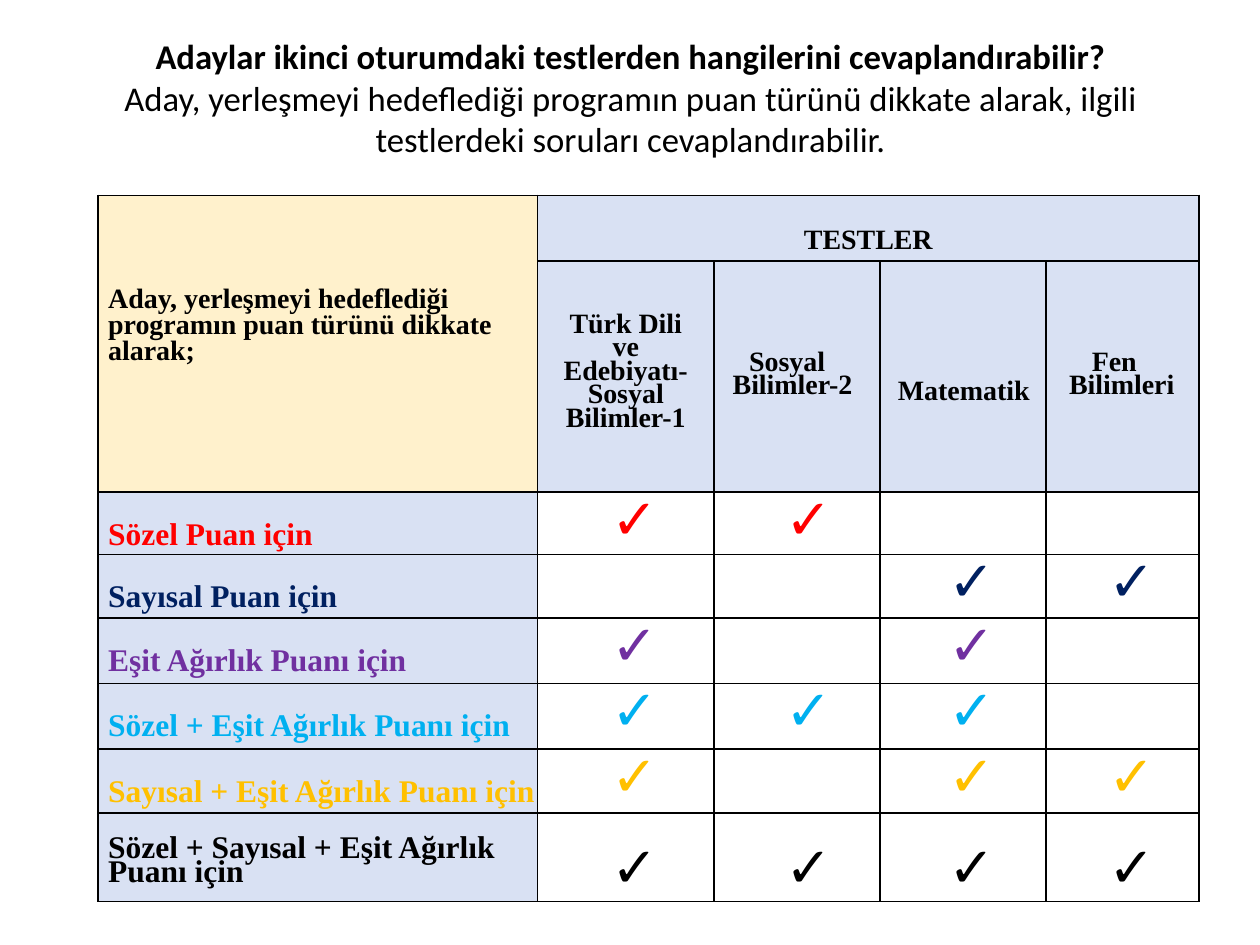
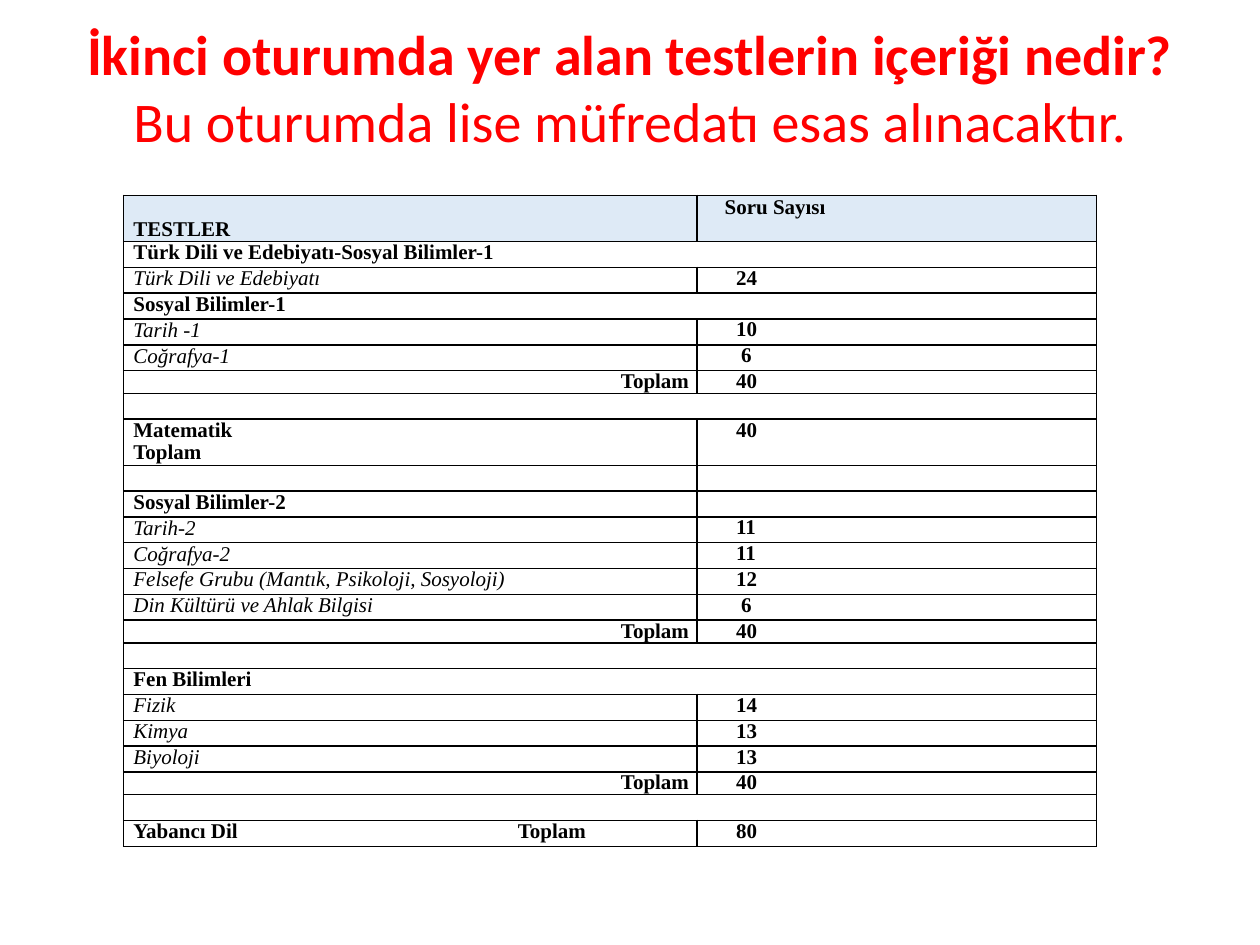
from lxml import etree
from pptx import Presentation
from pptx.dml.color import RGBColor
from pptx.enum.text import MSO_ANCHOR, PP_ALIGN
from pptx.oxml.ns import qn
from pptx.util import Cm, Pt

LEFT, MID, RIGHT = PP_ALIGN.LEFT, PP_ALIGN.CENTER, PP_ALIGN.RIGHT
MIDDLE = MSO_ANCHOR.MIDDLE
SERIF, SANS, ARIAL = "Times New Roman", "Calibri", "Arial"
BLACK, RED = "000000", "FF0000"
CREAM, BLUE, PALE = "FFF1CC", "D9E1F3", "DEEAF6"
TOP = 3.94
PAD = 0.2

SCORES = [
    ("Sözel Puan için", RED, "1100"),
    ("Sayısal Puan için", "002060", "0011"),
    ("Eşit Ağırlık Puanı için", "7030A0", "1010"),
    ("Sözel + Eşit Ağırlık Puanı için", "00B0F0", "1110"),
    ("Sayısal + Eşit Ağırlık Puanı için", "FFC000", "1011"),
    ("Sözel + Sayısal + Eşit Ağırlık Puanı için", BLACK, "1111"),
]

GROUP, TEST, TOTAL = "group", "test", "total"
TESTS = [
    (GROUP, "Türk Dili ve Edebiyatı-Sosyal Bilimler-1", None),
    (TEST, "Türk Dili ve Edebiyatı", "24"),
    (GROUP, "Sosyal Bilimler-1", None),
    (TEST, "Tarih -1", "10"),
    (TEST, "Coğrafya-1", "6"),
    (TOTAL, "Toplam", "40"),
    (GROUP, "", None),
    (GROUP, "Matematik\nToplam", "40"),
    (GROUP, "", ""),
    (GROUP, "Sosyal Bilimler-2", ""),
    (TEST, "Tarih-2", "11"),
    (TEST, "Coğrafya-2", "11"),
    (TEST, "Felsefe Grubu (Mantık, Psikoloji, Sosyoloji)", "12"),
    (TEST, "Din Kültürü ve Ahlak Bilgisi", "6"),
    (TOTAL, "Toplam", "40"),
    (GROUP, "", None),
    (GROUP, "Fen Bilimleri", None),
    (TEST, "Fizik", "14"),
    (TEST, "Kimya", "13"),
    (TEST, "Biyoloji", "13"),
    (TOTAL, "Toplam", "40"),
    (GROUP, "", None),
    (GROUP, "Yabancı Dil\tToplam", "80"),
]


def rgb(code):
    """Turn a hex string into a colour."""
    return RGBColor.from_string(code)


def style(font, name, size, color=BLACK, bold=True, italic=False):
    """Set every trait of a font."""
    font.name, font.size = name, Pt(size)
    font.bold, font.italic = bold, italic
    font.color.rgb = rgb(color)


def title(slide, top, size, color, lines):
    """Add a centred heading whose first line is bold."""
    box = slide.shapes.add_textbox(Cm(1.28), Cm(top), Cm(22.86), Cm(3.18))
    frame = box.text_frame
    frame.word_wrap = True
    frame.vertical_anchor = MIDDLE
    frame.text = "\n".join(lines)
    for num, para in enumerate(frame.paragraphs):
        para.alignment = MID
        style(para.font, SANS, size, color, bold=num == 0)


def border(cell):
    """Draw a thin black line on each side of a cell."""
    props = cell._tc.get_or_add_tcPr()
    for num, side in enumerate(("a:lnL", "a:lnR", "a:lnT", "a:lnB")):
        line = etree.Element(qn(side), w=str(Pt(1)))
        fill = etree.SubElement(line, qn("a:solidFill"))
        etree.SubElement(fill, qn("a:srgbClr"), val=BLACK)
        props.insert(num, line)


def grid(slide, left, cols, rows):
    """Add a plain ruled table with the given sizes."""
    frame = slide.shapes.add_table(len(rows), len(cols), Cm(left), Cm(TOP),
                                   Cm(sum(cols)), Cm(sum(rows)))
    table = frame.table
    table.first_row = table.horz_banding = False
    for col, width in zip(table.columns, cols):
        col.width = Cm(width)
    for row, height in zip(table.rows, rows):
        row.height = Cm(height)
    for cell in table.iter_cells():
        cell.margin_left = cell.margin_right = 0
        cell.margin_top = cell.margin_bottom = 0
        cell.fill.background()
        border(cell)
        style(cell.text_frame.paragraphs[0].font, SERIF, 12)
    return table


def shade(cell, color):
    """Fill a cell."""
    cell.fill.solid()
    cell.fill.fore_color.rgb = rgb(color)


def write(cell, text, size, top=0, left=PAD, right=0, lead=12.9, align=LEFT,
          name=SERIF, color=BLACK, bold=True, italic=False):
    """Put text in a cell at a set inset and line height."""
    cell.margin_top, cell.margin_left = Cm(top), Cm(left)
    cell.margin_right = Cm(right)
    cell.text_frame.text = text
    for para in cell.text_frame.paragraphs:
        para.alignment = align
        para.line_spacing = Pt(lead)
        style(para.font, name, size, color, bold, italic)


def indent(cell, width):
    """Indent the first line of a cell."""
    props = cell.text_frame.paragraphs[0]._p.get_or_add_pPr()
    props.set("indent", str(Cm(width)))


def tab(cell, place):
    """Set a left tab stop in a cell."""
    props = cell.text_frame.paragraphs[0]._p.get_or_add_pPr()
    stops = etree.Element(qn("a:tabLst"))
    etree.SubElement(stops, qn("a:tab"), pos=str(Cm(place)), algn="l")
    props.find(qn("a:defRPr")).addprevious(stops)


def heads(table):
    """Fill the two heading rows of the score table."""
    table.cell(0, 0).merge(table.cell(1, 0))
    table.cell(0, 1).merge(table.cell(0, 4))
    shade(table.cell(0, 0), CREAM)
    write(table.cell(0, 0), "Aday, yerleşmeyi hedeflediği programın puan "
          "türünü dikkate alarak;", 16, top=1.87, lead=15)
    shade(table.cell(0, 1), BLUE)
    write(table.cell(0, 1), "TESTLER", 16, top=0.76, left=0, align=MID)
    turk, social, maths, science = [table.cell(1, num) for num in range(1, 5)]
    for cell in (turk, social, maths, science):
        shade(cell, BLUE)
    write(turk, "Türk Dili ve Edebiyatı- Sosyal Bilimler-1", 16, top=1.1,
          left=0.33, right=0.33, lead=13.5, align=MID)
    write(social, "Sosyal Bilimler-2", 16, top=1.87, left=0.38, lead=13.5)
    indent(social, 0.33)
    write(maths, "Matematik", 16, top=2.49, left=0.36)
    write(science, "Fen Bilimleri", 16, top=1.87, left=0.46, lead=13.5)
    indent(science, 0.46)


def scores(slide):
    """Show which tests count for each score type."""
    title(slide, 0.37, 19.8, BLACK, [
        "Adaylar ikinci oturumdaki testlerden hangilerini cevaplandırabilir?",
        "Aday, yerleşmeyi hedeflediği programın puan türünü dikkate alarak, "
        "ilgili testlerdeki soruları cevaplandırabilir."])
    table = grid(slide, 1.98, [8.86, 3.55, 3.35, 3.35, 3.08],
                 [1.32, 4.66, 1.26, 1.28, 1.32, 1.32, 1.29, 1.78])
    heads(table)
    for row, (label, color, marks) in enumerate(SCORES, 2):
        last = row == len(SCORES) + 1
        shade(table.cell(row, 0), BLUE)
        write(table.cell(row, 0), label, 18, top=0.58 if last else 0.75,
              lead=13.5 if last else 12.9, color=color)
        for col, mark in enumerate(marks, 1):
            if mark == "1":
                write(table.cell(row, col), "✓", 32, lead=12.6, align=MID,
                      top=1.3 if last else 0.75, name=ARIAL, color=color,
                      left=0.48 if col == 2 else 0.36)


def height(kind, label):
    """Give the row height for a test entry."""
    if "\n" in label:
        return 0.93
    return 0.46 if kind == TOTAL else 0.52


def tests(slide):
    """List the number of questions in each test."""
    title(slide, 0.16, 32, RED, [
        "İkinci oturumda yer alan testlerin içeriği nedir?",
        "Bu oturumda lise müfredatı esas alınacaktır."])
    rows = [0.93] + [height(kind, label) for kind, label, _ in TESTS]
    table = grid(slide, 2.49, [11.56, 8.05], rows)
    for col in (0, 1):
        shade(table.cell(0, col), PALE)
    write(table.cell(0, 0), "TESTLER", 12, top=0.47)
    write(table.cell(0, 1), "Soru Sayısı", 12, left=0.56, lead=13.8)
    for row, (kind, label, count) in enumerate(TESTS, 1):
        name, value = table.cell(row, 0), table.cell(row, 1)
        if count is None:
            name.merge(value)
        test = kind == TEST
        write(name, label, 12, right=0.16, bold=not test, italic=test,
              lead=13.2 if test else 12.9,
              align=RIGHT if kind == TOTAL else LEFT)
        if "\t" in label:
            tab(name, 7.75)
        if count:
            write(value, count, 12, left=0.79 if len(count) > 1 else 0.89)


def main():
    """Build and save both slides."""
    deck = Presentation()
    deck.slide_width, deck.slide_height = Cm(25.4), Cm(19.05)
    for build in (scores, tests):
        build(deck.slides.add_slide(deck.slide_layouts[6]))
    deck.save("out.pptx")


if __name__ == "__main__":
    main()
